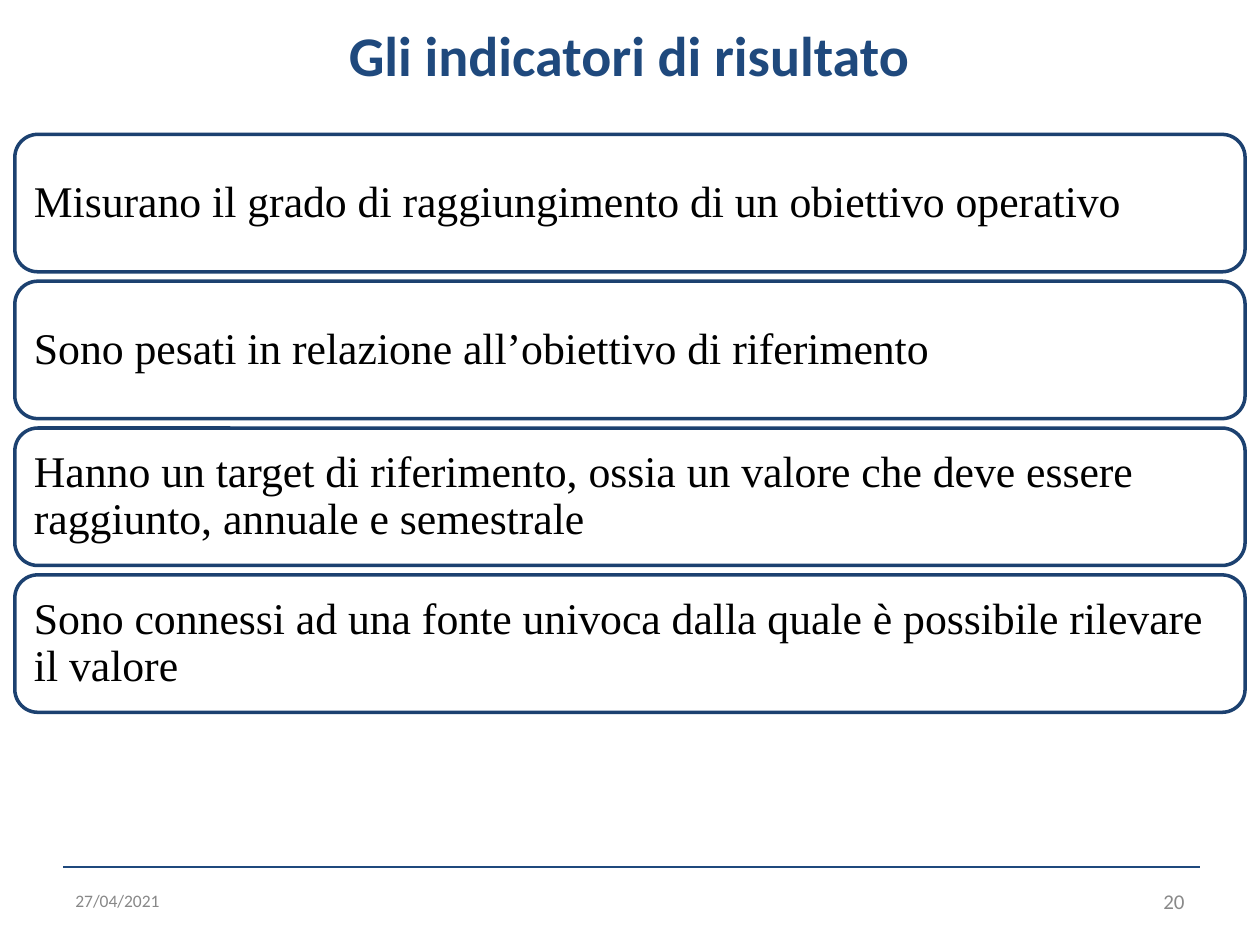
from dataclasses import dataclass

from lxml import etree
from pptx import Presentation
from pptx.dml.color import RGBColor
from pptx.enum.shapes import MSO_CONNECTOR, MSO_SHAPE
from pptx.enum.text import MSO_ANCHOR, PP_ALIGN
from pptx.oxml.ns import qn
from pptx.util import Cm, Pt

ROUND = MSO_SHAPE.ROUNDED_RECTANGLE
LINE = MSO_CONNECTOR.STRAIGHT
TOP, MIDDLE = MSO_ANCHOR.TOP, MSO_ANCHOR.MIDDLE
LEFT, CENTER, RIGHT = PP_ALIGN.LEFT, PP_ALIGN.CENTER, PP_ALIGN.RIGHT


@dataclass(frozen=True)
class Theme:
    sans: str = "Calibri"
    serif: str = "Times New Roman"
    navy: RGBColor = RGBColor(0x1F, 0x49, 0x7D)
    edge: RGBColor = RGBColor(0x1C, 0x41, 0x70)
    ink: RGBColor = RGBColor(0, 0, 0)
    paper: RGBColor = RGBColor(0xFF, 0xFF, 0xFF)
    date: RGBColor = RGBColor(0x88, 0x88, 0x88)
    page: RGBColor = RGBColor(0x89, 0x89, 0x89)
    title_size: int = 32
    card_size: int = 25
    date_size: int = 10
    page_size: int = 12


class Canvas:
    def __init__(self, slide, theme):
        self.slide = slide
        self.theme = theme

    def set_text(self, shape, text, face, size, color, align, anchor, pad, bold=False):
        frame = shape.text_frame
        frame.word_wrap = True
        frame.vertical_anchor = anchor
        frame.margin_left = frame.margin_right = Cm(0.25)
        frame.margin_top = frame.margin_bottom = Cm(pad)
        para = frame.paragraphs[0]
        para.text = text
        para.alignment = align
        font = para.font
        font.name, font.size, font.bold = face, Pt(size), bold
        font.color.rgb = color
        return para

    def label(self, box, text, size, color, align, anchor=MIDDLE, bold=False):
        shape = self.slide.shapes.add_textbox(*map(Cm, box))
        self.set_text(shape, text, self.theme.sans, size, color, align, anchor, 0.13, bold)

    def card(self, box, text):
        look = self.theme
        shape = self.slide.shapes.add_shape(ROUND, *map(Cm, box))
        shape.shadow.inherit = False
        shape.fill.solid()
        shape.fill.fore_color.rgb = look.paper
        shape.line.color.rgb = look.edge
        shape.line.width = Pt(2)
        para = self.set_text(shape, text, look.serif, look.card_size, look.ink, LEFT, MIDDLE, 0.25)
        para.line_spacing = 0.9

    def rule(self, start, end, y):
        line = self.slide.shapes.add_connector(LINE, Cm(start), Cm(y), Cm(end), Cm(y))
        line.line.color.rgb = self.theme.navy
        line.line.width = Pt(1.5)
        etree.SubElement(line._element.spPr, qn("a:effectLst"))


def main():
    deck = Presentation()
    deck.slide_width, deck.slide_height = Cm(25.4), Cm(19.05)
    look = Theme()
    page = Canvas(deck.slides.add_slide(deck.slide_layouts[6]), look)

    page.rule(1.27, 24.2, 17.48)
    cards = [
        "Misurano il grado di raggiungimento di un obiettivo operativo",
        "Sono pesati in relazione all’obiettivo di riferimento",
        "Hanno un target di riferimento, ossia un valore che deve essere raggiunto, annuale e semestrale",
        "Sono connessi ad una fonte univoca dalla quale è possibile rilevare il valore",
    ]
    first, step = 2.71, 2.96
    for row, text in enumerate(cards):
        page.card((0.3, first + row * step, 24.8, 2.77), text)

    page.label((0.25, 0.28, 24.87, 2.06), "Gli indicatori di risultato",
               look.title_size, look.navy, CENTER, TOP, True)
    page.label((1.27, 17.65, 5.92, 1.02), "27/04/2021", look.date_size, look.date, LEFT)
    page.label((18.21, 17.65, 5.92, 1.02), "20", look.page_size, look.page, RIGHT)
    deck.save("out.pptx")


if __name__ == "__main__":
    main()
